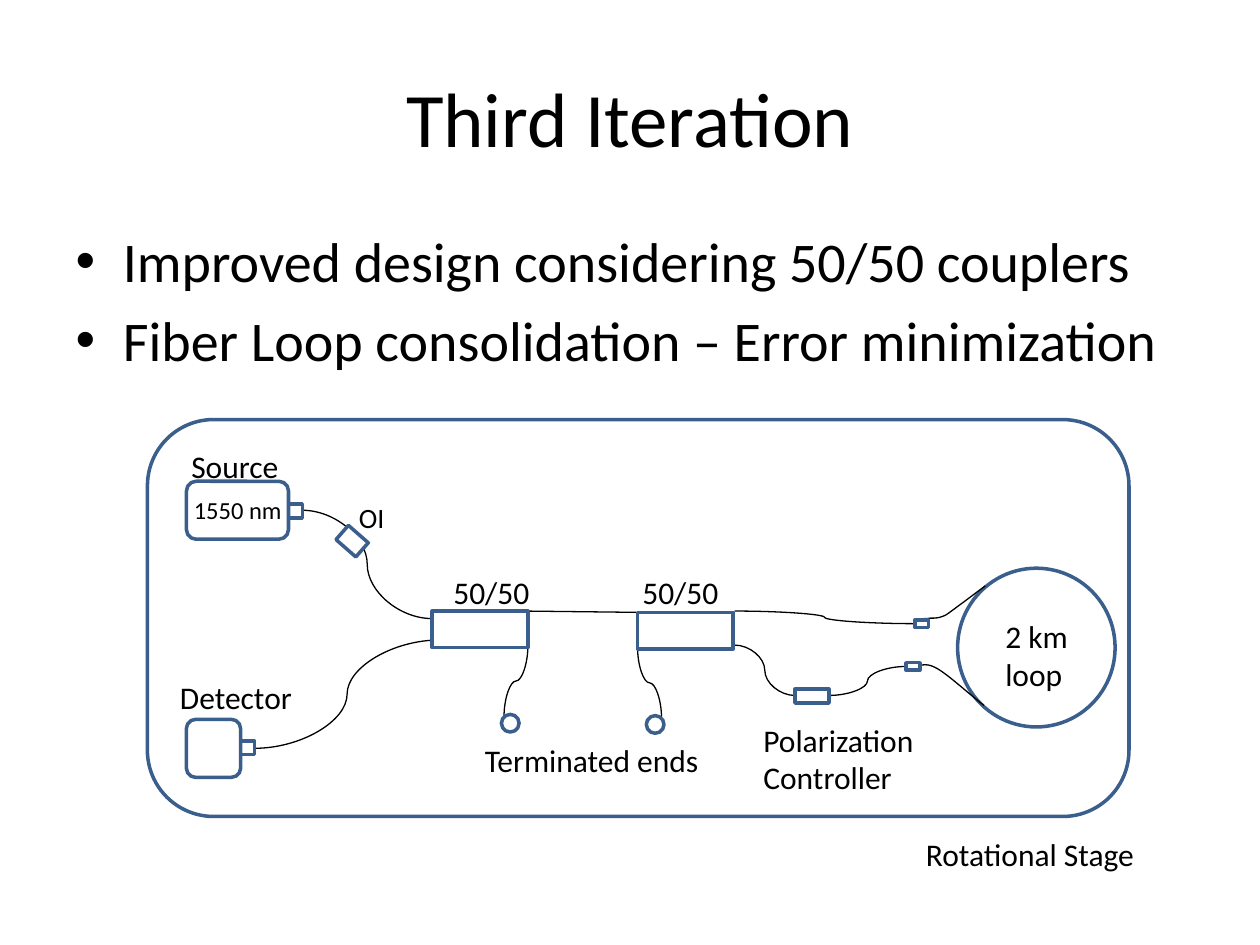
from lxml import etree
from pptx import Presentation
from pptx.dml.color import RGBColor
from pptx.enum import shapes as kinds, text as txt
from pptx.oxml.ns import qn
from pptx.util import Inches, Pt

BLUE, BLACK, WHITE = "3A5F8C", "000000", "FFFFFF"
RECT, ROUND, OVAL = (kinds.MSO_SHAPE.RECTANGLE, kinds.MSO_SHAPE.ROUNDED_RECTANGLE,
                     kinds.MSO_SHAPE.OVAL)


def write(frame, *lines, size=18, color=BLACK, align=None):
    for i, line in enumerate(lines):
        paragraph = frame.paragraphs[0] if i == 0 else frame.add_paragraph()
        paragraph.alignment = align
        run = paragraph.add_run()
        run.text = line
        run.font.name = "Calibri"
        run.font.size = Pt(size)
        run.font.color.rgb = RGBColor.from_string(color)


def outline(item, color, width, fill=None):
    """Set line and fill, and drop the shadow."""
    item.line.color.rgb = RGBColor.from_string(color)
    item.line.width = Pt(width)
    if fill:
        item.fill.solid()
        item.fill.fore_color.rgb = RGBColor.from_string(fill)
    elif hasattr(item, "fill"):
        item.fill.background()
    if hasattr(item, "shadow"):
        item.shadow.inherit = False
    else:
        etree.SubElement(item._element.spPr, qn("a:effectLst"))


prs = Presentation()
prs.slide_width, prs.slide_height = Inches(10), Inches(7.5)
slide = prs.slides.add_slide(prs.slide_layouts[1])
drawing = slide.shapes

# Title and bullets
title, bullets = slide.placeholders
for holder, top, height in [(title, 0.3, 1.25), (bullets, 1.75, 4.95)]:
    holder.left, holder.top = Inches(0.5), Inches(top)
    holder.width, holder.height = Inches(9), Inches(height)
title.text_frame.vertical_anchor = txt.MSO_ANCHOR.MIDDLE
write(title.text_frame, "Third Iteration", size=44, align=txt.PP_ALIGN.CENTER)
write(bullets.text_frame, "Improved design considering 50/50 couplers",
      "Fiber Loop consolidation – Error minimization", size=32)

# Stage and fiber loop, behind the fibers
for kind, left, top, width, height in [
    (ROUND, 1.17, 3.33, 7.79, 3.15),
    (OVAL, 7.6, 4.51, 1.25, 1.26),
]:
    backdrop = drawing.add_shape(kind, Inches(left), Inches(top), Inches(width), Inches(height))
    outline(backdrop, BLUE, 2)

# Fibers that leave their start horizontally
CURVE, STRAIGHT = kinds.MSO_CONNECTOR.CURVE, kinds.MSO_CONNECTOR.STRAIGHT
for kind, x1, y1, x2, y2 in [
    (CURVE, 2.4, 4.05, 3.43, 4.91),     # source to coupler
    (CURVE, 2.02, 5.94, 3.49, 5.08),    # detector to coupler
    (STRAIGHT, 4.19, 4.85, 5.05, 4.86),  # coupler to coupler
    (CURVE, 5.83, 4.85, 7.26, 4.95),    # coupler to loop
    (CURVE, 5.83, 5.12, 6.31, 5.52),    # coupler to polarization controller
    (CURVE, 6.58, 5.52, 7.19, 5.29),    # polarization controller to loop
]:
    fiber = drawing.add_connector(kind, Inches(x1), Inches(y1), Inches(x2), Inches(y2))
    outline(fiber, BLACK, 0.75)

# Terminated fibers leave downwards: a horizontal curve turned about its centre
for x1, y1, x2, y2 in [(4.19, 5.12, 4, 5.69), (5.06, 5.14, 5.25, 5.7)]:
    mid_x, mid_y = (x1 + x2) / 2, (y1 + y2) / 2
    half_run, half_rise = (y2 - y1) / 2, abs(x2 - x1) / 2
    side = 1 if x2 < x1 else -1
    fiber = drawing.add_connector(
        CURVE, Inches(mid_x - side * half_run), Inches(mid_y - half_rise),
        Inches(mid_x + side * half_run), Inches(mid_y + half_rise))
    fiber._element.spPr.find(qn("a:xfrm")).set("rot", str((90 if side > 0 else 270) * 60000))
    outline(fiber, BLACK, 0.75)

# Loop leads: chains of cubic curves, four points each with shared ends
STEPS = 12
for lead in [
    [(7.82, 4.65), (7.7, 4.74), (7.58, 4.83), (7.51, 4.88), (7.43, 4.92),
     (7.39, 4.9), (7.36, 4.91), (7.33, 4.91), (7.34, 4.91), (7.33, 4.91)],
    [(7.81, 5.6), (7.67, 5.49), (7.54, 5.37), (7.46, 5.32), (7.37, 5.26),
     (7.33, 5.28), (7.3, 5.28), (7.26, 5.27), (7.27, 5.28), (7.26, 5.28)],
]:
    points = []
    for start in range(0, len(lead) - 1, 3):
        for step in range(1, STEPS + 1):
            t = step / STEPS
            weights = ((1 - t) ** 3, 3 * t * (1 - t) ** 2, 3 * t * t * (1 - t), t ** 3)
            corners = lead[start:start + 4]
            points.append(tuple(Inches(sum(w * c[axis] for w, c in zip(weights, corners)))
                                for axis in (0, 1)))
    builder = drawing.build_freeform(Inches(lead[0][0]), Inches(lead[0][1]))
    builder.add_line_segments(points, close=False)
    outline(builder.convert_to_shape(), BLACK, 0.75)

# Optical parts
for kind, left, top, width, height, turn, fill in [
    (RECT, 2.24, 4, 0.16, 0.11, 0, WHITE),       # source port
    (ROUND, 1.48, 3.82, 0.81, 0.46, 0, WHITE),   # source
    (RECT, 1.86, 5.88, 0.16, 0.11, 0, WHITE),    # detector port
    (ROUND, 1.48, 5.71, 0.43, 0.46, 0, WHITE),   # detector
    (RECT, 3.43, 4.85, 0.76, 0.29, 0, WHITE),    # couplers
    (RECT, 5.06, 4.86, 0.76, 0.29, 0, WHITE),
    (OVAL, 3.98, 5.67, 0.14, 0.14, 0, None),     # terminated ends
    (OVAL, 5.13, 5.68, 0.14, 0.14, 0, None),
    (RECT, 7.26, 4.92, 0.11, 0.06, 0, WHITE),    # loop ports
    (RECT, 7.19, 5.26, 0.11, 0.06, 0, WHITE),
    (RECT, 6.31, 5.47, 0.27, 0.11, 0, WHITE),    # polarization controller
    (RECT, 2.72, 4.19, 0.15, 0.21, 311.2, WHITE),  # optical isolator
]:
    part = drawing.add_shape(kind, Inches(left), Inches(top), Inches(width), Inches(height))
    part.rotation = turn
    outline(part, BLUE, 2, fill)

# Labels
for caption, left, top, width, height, size in [
    ("Source", 1.42, 3.5, 0.97, 0.33, 18),
    ("1550 nm", 1.44, 3.88, 1.34, 0.34, 14),
    ("OI", 2.75, 3.92, 0.45, 0.28, 16),
    ("Detector", 1.33, 5.33, 1.25, 0.4, 18),
    ("50/50", 3.5, 4.5, 1, 0.4, 18),
    ("50/50", 5, 4.5, 1, 0.4, 18),
    ("Terminated ends", 3.75, 5.83, 1.98, 0.58, 18),
    ("2 km loop", 7.88, 4.85, 0.81, 0.28, 18),
    ("Polarization Controller", 5.96, 5.67, 1.68, 0.83, 18),
    ("Rotational Stage", 7.25, 6.58, 1.92, 0.4, 18),
]:
    label = drawing.add_textbox(Inches(left), Inches(top), Inches(width), Inches(height))
    label.text_frame.word_wrap = True
    write(label.text_frame, caption, size=size)

prs.save("out.pptx")
